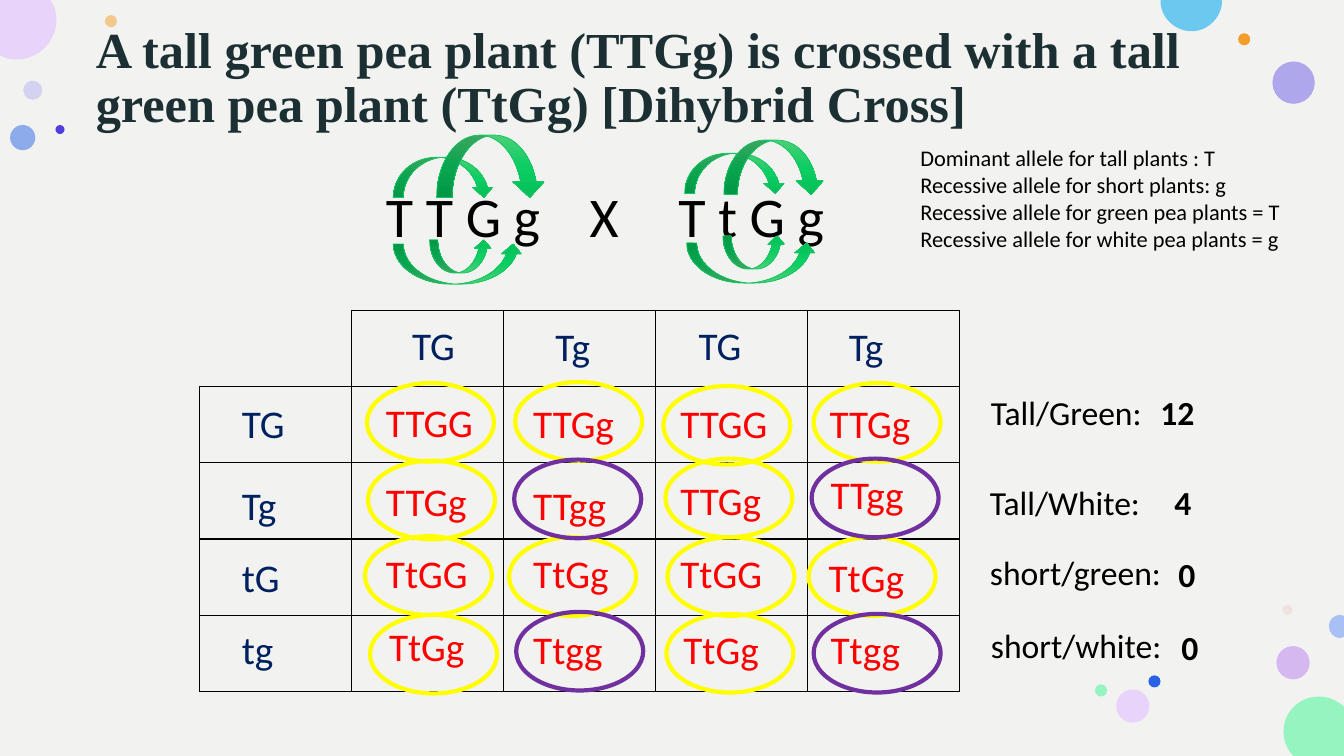
from copy import deepcopy

from lxml.etree import SubElement
from pptx import Presentation
from pptx.dml.color import RGBColor
from pptx.enum.shapes import MSO_SHAPE as Preset
from pptx.enum.text import MSO_ANCHOR as Anchor, MSO_AUTO_SIZE as AutoSize, PP_ALIGN as Align
from pptx.oxml.ns import qn
from pptx.util import Inches, Pt

WIDTH, HEIGHT = 13.33, 7.5
COLORS = {
    "background": "F2F3F0", "title": "1C2F32", "text": "000000",
    "gamete": "002060", "offspring": "FF0000", "grid": "000000",
    "green_ring": "FFFF00", "white_ring": "7030A0", "arrow_line": "15C564",
    "arrow_top": "4CCF77", "arrow_middle": "0CCE63", "arrow_bottom": "03BF57",
    "lilac": "B9B1F1", "orange": "F39E29", "purple": "BB7FF1", "blue": "2962E7",
    "violet": "958BEA", "pink": "E3BEBE", "lavender": "E8D4FA", "mint": "95F4C0",
    "sky": "6BC9EF", "indigo": "4F3DDC", "pale_blue": "A9C0F5",
}
DOTS = [
    (0.23, 0.8, 0.19, "lilac", 50), (1.04, 0.15, 0.12, "orange", 50),
    (12.66, 6.41, 0.33, "purple", 50), (0.1, 1.24, 0.25, "blue", 50),
    (12.62, 0.61, 0.42, "violet", 72), (12.28, 0.33, 0.12, "orange", 100),
    (12.72, 6, 0.1, "pink", 28), (11.39, 6.7, 0.12, "blue", 100),
    (11.07, 6.84, 0.33, "lavender", 100), (10.86, 6.79, 0.12, "mint", 100),
    (0.55, 1.24, 0.09, "indigo", 100),
]
EDGE_DOTS = [
    ("mint", (13.08, 6.91), [
        [(13.18, 6.91), (13.26, 6.95), (13.33, 7.01)], [(13.33, 7.5)], [(12.83, 7.5)],
        [(12.81, 7.48)], [(12.76, 7.42), (12.73, 7.34), (12.73, 7.26)],
        [(12.73, 7.06), (12.89, 6.91), (13.08, 6.91)]]),
    ("lavender", (0, 0), [
        [(0.5, 0)], [(0.53, 0.05)], [(0.55, 0.09), (0.56, 0.14), (0.56, 0.2)],
        [(0.56, 0.41), (0.38, 0.59), (0.17, 0.59)],
        [(0.11, 0.59), (0.06, 0.58), (0.02, 0.56)], [(0, 0.55)]]),
    ("sky", (11.52, 0), [
        [(12.12, 0)], [(12.12, 0.01)], [(12.12, 0.17), (11.98, 0.31), (11.82, 0.31)],
        [(11.65, 0.31), (11.51, 0.17), (11.51, 0.01)]]),
    ("pale_blue", (13.29, 6.1), [
        [(13.33, 6.11)], [(13.33, 6.32)], [(13.29, 6.33)],
        [(13.23, 6.33), (13.18, 6.28), (13.18, 6.21)],
        [(13.18, 6.15), (13.23, 6.1), (13.29, 6.1)]]),
]
ARROWS = [
    (3.9, 1.56, 1, 0.4, False), (3.9, 2.42, 1.29, 0.4, True),
    (4.26, 2.38, 0.62, 0.33, True), (4.33, 1.34, 1.08, 0.62, False),
    (6.79, 1.52, 1, 0.4, False), (6.81, 2.41, 1.29, 0.4, True),
    (7.18, 1.39, 1, 0.54, False), (7.17, 2.34, 0.62, 0.33, True),
]
GAMETES = [
    ("TG", 3.99, 3.14), ("Tg", 5.41, 3.15), ("TG", 6.83, 3.14), ("Tg", 8.32, 3.15),
    ("TG", 2.3, 3.91), ("Tg", 2.3, 4.73), ("tG", 2.3, 5.44), ("tg", 2.3, 6.15),
]
OFFSPRING = [
    ("TTGG", (3.73, 3.9), (3.64, 3.8)), ("TTGg", (5.19, 3.91), (5.11, 3.79)),
    ("TTGG", (6.65, 3.91), (6.58, 3.83)), ("TTGg", (8.13, 3.91), (8.07, 3.8)),
    ("TTGg", (3.73, 4.69), (3.65, 4.57)), ("TTgg", (5.19, 4.73), (5.1, 4.56)),
    ("TTGg", (6.65, 4.68), (6.6, 4.55)), ("TTgg", (8.14, 4.62), (8.05, 4.55)),
    ("TtGG", (3.73, 5.4), (3.62, 5.32)), ("TtGg", (5.19, 5.4), (5.05, 5.33)),
    ("TtGG", (6.65, 5.4), (6.62, 5.33)), ("TtGg", (8.12, 5.44), (8.02, 5.33)),
    ("TtGg", (3.76, 6.12), (3.67, 6.1)), ("Ttgg", (5.19, 6.15), (5.12, 6.07)),
    ("TtGg", (6.68, 6.15), (6.61, 6.09)), ("Ttgg", (8.14, 6.15), (8.07, 6.09)),
]
PHENOTYPES = [
    ("Tall/Green:", 9.73, 3.84, "12", 11.41, 3.84),
    ("Tall/White:", 9.72, 4.73, "4", 11.55, 4.73),
    ("short/green:", 9.72, 5.43, "0", 11.59, 5.45),
    ("short/white:", 9.73, 6.15, "0", 11.62, 6.17),
]
ALLELES = [
    "Dominant allele for tall plants : T",
    "Recessive allele for short plants: g\vRecessive allele for green pea plants = T"
    "\vRecessive allele for white pea plants = g",
]


def rgb(name):
    return RGBColor.from_string(COLORS[name])


def box(*lengths):
    return [Inches(length) for length in lengths]


def paint(shape, color):
    shape.shadow.inherit = False
    shape.fill.solid()
    shape.fill.fore_color.rgb = rgb(color)
    shape.line.fill.background()


def add_dot(slide, left, top, size, color, opacity):
    dot = slide.shapes.add_shape(Preset.OVAL, *box(left, top, size, size))
    paint(dot, color)
    if opacity < 100:
        tint = dot._element.spPr.find(".//" + qn("a:srgbClr"))
        SubElement(tint, qn("a:alpha"), val=str(opacity * 1000))


def add_edge_dot(slide, color, start, segments):
    """Draw a cut-off circle; segments of three points become Bezier curves."""
    builder = slide.shapes.build_freeform(*box(*start))
    builder.add_line_segments([box(*point) for segment in segments for point in segment])
    dot = builder.convert_to_shape()
    paint(dot, color)
    steps = iter(dot._element.spPr.findall(".//" + qn("a:lnTo")))
    for segment in segments:
        first, *others = [next(steps) for _ in segment]
        if others:
            first.tag = qn("a:cubicBezTo")
            for step in others:
                first.append(step[0])
                step.getparent().remove(step)


def add_text(slide, lines, left, top, width, height, size, color="text", bold=False, tab=None):
    label = slide.shapes.add_textbox(*box(left, top, width, height))
    frame = label.text_frame
    frame.word_wrap = True
    frame.auto_size = AutoSize.SHAPE_TO_FIT_TEXT
    frame.text = "\n".join(lines)
    for paragraph in frame.paragraphs:
        if tab:
            stops = SubElement(paragraph._p.get_or_add_pPr(), qn("a:tabLst"))
            SubElement(stops, qn("a:tab"), pos=str(Inches(tab)), algn="l")
        font = paragraph.font
        font.name, font.size, font.bold = "Calibri", Pt(size), bold
        font.color.rgb = rgb(color)


def add_arrow(slide, left, top, width, height, below):
    arrow = slide.shapes.add_shape(Preset.CURVED_DOWN_ARROW, *box(left, top, width, height))
    arrow.shadow.inherit = False
    arrow.fill.gradient()
    arrow.fill.gradient_angle = 270
    first = arrow._element.spPr.find(".//" + qn("a:gs"))
    first.addnext(deepcopy(first))
    shades = ("arrow_top", "arrow_middle", "arrow_bottom")
    for index, (stop, shade) in enumerate(zip(arrow.fill.gradient_stops, shades)):
        stop.position = index / 2
        stop.color.rgb = rgb(shade)
    arrow.line.color.rgb = rgb("arrow_line")
    arrow.line.width = Pt(0.5)
    if below:
        arrow._element.spPr.find(qn("a:xfrm")).set("flipV", "1")


def add_ring(slide, left, top, color):
    ring = slide.shapes.add_shape(Preset.OVAL, *box(left, top, 1.26, 0.78))
    ring.shadow.inherit = False
    ring.fill.background()
    ring.line.color.rgb = rgb(color)
    ring.line.width = Pt(3)


def set_borders(cell, visible):
    properties = cell._tc.get_or_add_tcPr()
    for position, side in enumerate("LRTB"):
        border = SubElement(properties, qn(f"a:ln{side}"), w=str(Pt(1)))
        properties.insert(position, border)
        if side in visible:
            fill = SubElement(border, qn("a:solidFill"))
            SubElement(fill, qn("a:srgbClr"), val=COLORS["grid"])
        else:
            SubElement(border, qn("a:noFill"))


def add_punnett_square(slide):
    square = slide.shapes.add_table(5, 5, *box(1.98, 3.08, 7.54, 3.78)).table
    square.first_row = square.horz_banding = False
    for row in range(5):
        for column in range(5):
            cell = square.cell(row, column)
            cell.fill.background()
            set_borders(cell, "LRTB" if row or column else "RB")


def add_title(slide, text):
    title = slide.shapes.title
    title.left, title.top, title.width, title.height = box(0.85, 0.06, 11.66, 1.45)
    frame = title.text_frame
    frame.text = text
    frame.word_wrap = True
    frame.auto_size = AutoSize.NONE
    frame.vertical_anchor = Anchor.MIDDLE
    heading = frame.paragraphs[0]
    heading.alignment, heading.line_spacing = Align.LEFT, 0.9
    font = heading.font
    font.name, font.size, font.bold = "Times New Roman", Pt(36), True
    font.color.rgb = rgb("title")


def main():
    deck = Presentation()
    deck.slide_width, deck.slide_height = box(WIDTH, HEIGHT)
    slide = deck.slides.add_slide(deck.slide_layouts[5])
    slide.background.fill.solid()
    slide.background.fill.fore_color.rgb = rgb("background")
    for dot in DOTS:
        add_dot(slide, *dot)
    for dot in EDGE_DOTS:
        add_edge_dot(slide, *dot)
    add_title(slide, "A tall green pea plant (TTGg) is crossed with a tall "
                     "green pea plant (TtGg) [Dihybrid Cross]")
    add_punnett_square(slide)
    add_text(slide, ["T T G g\tX"], 3.73, 1.75, 2.54, 0.77, 40, tab=2.02)
    add_text(slide, ["T t G g"], 6.63, 1.75, 2.31, 0.77, 40)
    for arrow in ARROWS:
        add_arrow(slide, *arrow)
    for gamete, left, top in GAMETES:
        add_text(slide, [gamete], left, top, 0.68, 0.57, 28, "gamete")
    for genotype, place, _ in OFFSPRING:
        add_text(slide, [genotype], *place, 1.15, 0.57, 28, "offspring")
    for genotype, _, place in sorted(OFFSPRING, key=lambda plant: plant[0].endswith("gg")):
        add_ring(slide, *place, "white_ring" if genotype.endswith("gg") else "green_ring")
    for phenotype, left, top, count, count_left, count_top in PHENOTYPES:
        width = 1.73 if phenotype.startswith("Tall") else 2.02
        add_text(slide, [phenotype], left, top, width, 0.5, 24)
        add_text(slide, [count], count_left, count_top, 0.66, 0.5, 24, bold=True)
    add_text(slide, ALLELES, 9.03, 1.38, 4.05, 1.18, 16)
    deck.save("out.pptx")


if __name__ == "__main__":
    main()
